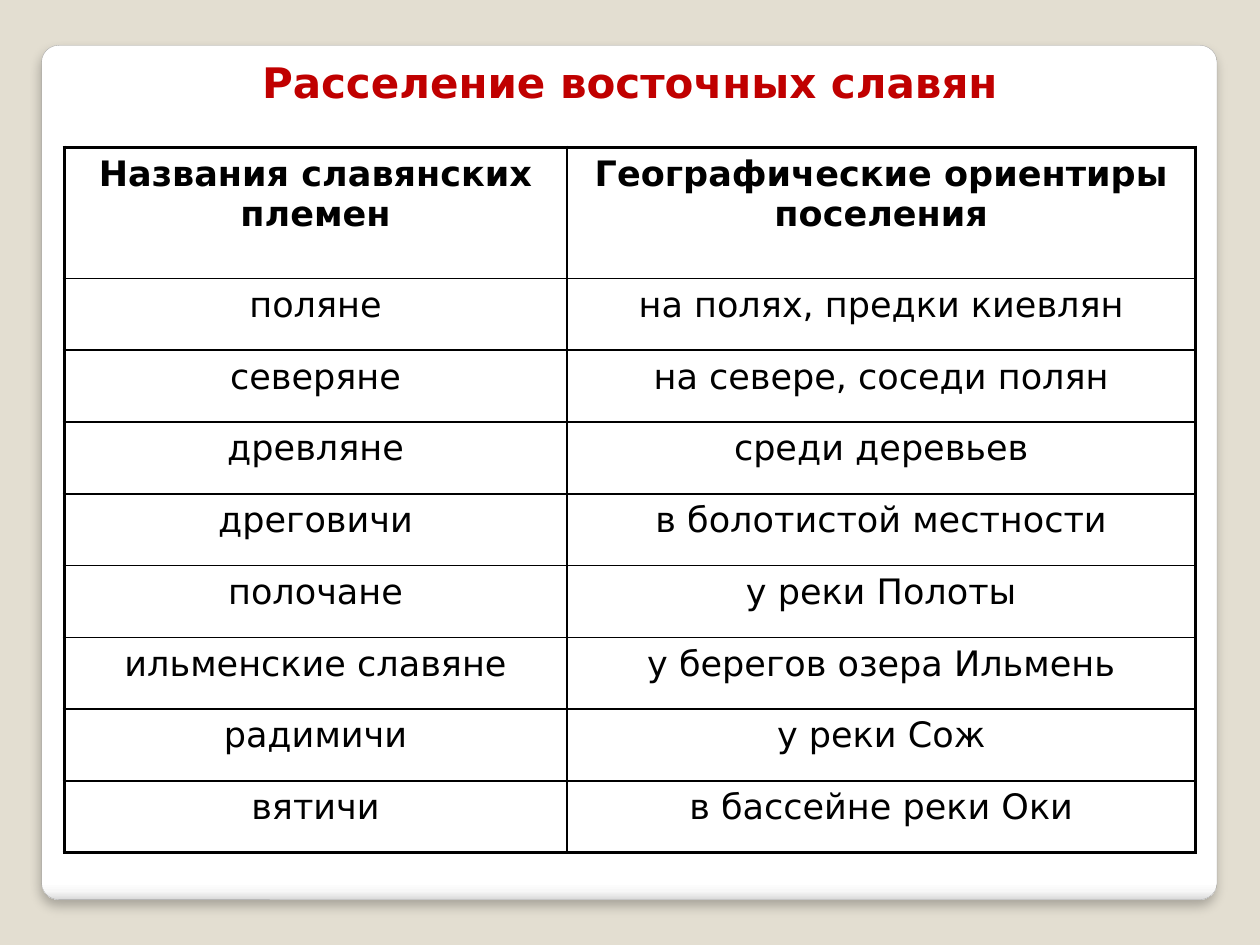
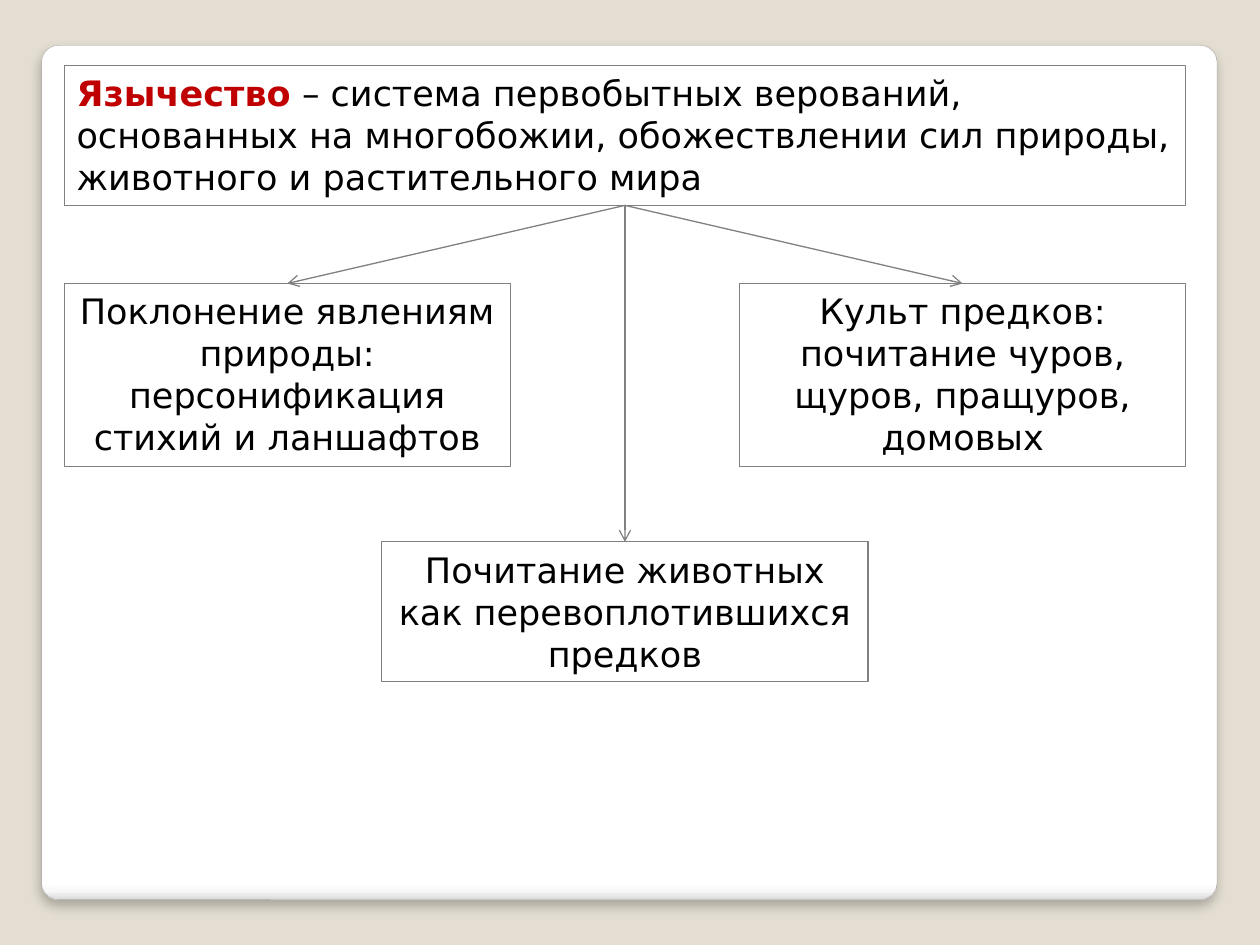
from dataclasses import dataclass

from lxml.etree import SubElement
from pptx import Presentation
from pptx.dml.color import RGBColor
from pptx.enum.shapes import MSO_CONNECTOR as Link, MSO_SHAPE as Preset
from pptx.enum.text import MSO_ANCHOR as Anchor, MSO_AUTO_SIZE as AutoSize, PP_ALIGN as Align
from pptx.oxml import parse_xml
from pptx.oxml.ns import nsdecls, qn
from pptx.shapes.autoshape import Shape
from pptx.slide import Slide
from pptx.util import Inches, Pt

COLORS = {
    "background": "E3DED1",
    "panel_edge": "A4A4A4",
    "accent": "C00000",
    "text": "000000",
    "outline": "808080",
}
PANEL_STOPS = ((0, "FFFFFF"), (98, "FFFFFF"), (99, "F7F7F7"), (100, "DADADA"))
FONT = "DejaVu Sans"
BODY_SIZE = 20
THIN, THICK = 1, 2.25
TOP, BOTTOM = 0, 2

TRIBES = (
    ("Названия славянских племен", "Географические ориентиры поселения"),
    ("поляне", "на полях, предки киевлян"),
    ("северяне", "на севере, соседи полян"),
    ("древляне", "среди деревьев"),
    ("дреговичи", "в болотистой местности"),
    ("полочане", "у реки Полоты"),
    ("ильменские славяне", "у берегов озера Ильмень"),
    ("радимичи", "у реки Сож"),
    ("вятичи", "в бассейне реки Оки"),
)


@dataclass(frozen=True)
class Note:
    left: float
    top: float
    width: float
    height: float
    text: str
    term: str = ""
    align: Align = Align.CENTER


DEFINITION = Note(
    0.51, 0.52, 8.9, 1.11,
    " – система первобытных верований, основанных на многобожии, "
    "обожествлении сил природы, животного и растительного мира",
    term="Язычество", align=Align.LEFT,
)
BELIEFS = (
    Note(0.51, 2.25, 3.54, 1.45,
         "Поклонение явлениям природы: персонификация стихий и ланшафтов"),
    Note(5.87, 2.25, 3.54, 1.45,
         "Культ предков: почитание чуров, щуров, пращуров, домовых"),
    Note(3.03, 4.3, 3.86, 1.11,
         "Почитание животных как перевоплотившихся предков"),
)


def color(name: str) -> RGBColor:
    return RGBColor.from_string(COLORS[name])


def set_font(font, size: float, name: str = "text", bold: bool = False) -> None:
    font.name, font.size, font.bold = FONT, Pt(size), bold
    font.color.rgb = color(name)


def add_page(deck) -> Slide:
    """Add a slide with the shared background and rounded white panel."""
    page = deck.slides.add_slide(deck.slide_layouts[6])
    page.background.fill.solid()
    page.background.fill.fore_color.rgb = color("background")
    panel = page.shapes.add_shape(
        Preset.ROUNDED_RECTANGLE, Inches(0.33), Inches(0.36), Inches(9.33), Inches(6.78))
    panel.adjustments[0] = 0.02
    stops = "".join(
        f'<a:gs pos="{place * 1000}"><a:srgbClr val="{shade}"/></a:gs>'
        for place, shade in PANEL_STOPS)
    properties = panel.element.spPr
    properties.find(qn("a:prstGeom")).addnext(parse_xml(
        f'<a:gradFill {nsdecls("a")}><a:gsLst>{stops}</a:gsLst>'
        '<a:lin ang="5400000" scaled="0"/></a:gradFill>'))
    panel.line.color.rgb = color("panel_edge")
    panel.line.width = Pt(0.16)
    panel.shadow.inherit = False
    properties.find(qn("a:effectLst")).append(parse_xml(
        f'<a:outerShdw {nsdecls("a")} blurRad="{Pt(6)}" dist="{Pt(4)}" dir="5400000" '
        'algn="t" rotWithShape="0"><a:srgbClr val="000000"><a:alpha val="25000"/>'
        '</a:srgbClr></a:outerShdw>'))
    return page


def add_title(page: Slide, text: str) -> None:
    box = page.shapes.add_textbox(Inches(0.35), Inches(0.39), Inches(9.3), Inches(0.52))
    frame = box.text_frame
    frame.word_wrap = True
    frame.vertical_anchor = Anchor.MIDDLE
    para = frame.paragraphs[0]
    para.text, para.alignment = text, Align.CENTER
    set_font(para.font, 24, "accent", bold=True)


def set_borders(cell, widths: dict[str, float]) -> None:
    """Draw cell borders; keys are L, R, T and B in schema order."""
    properties = cell._tc.get_or_add_tcPr()
    for side, width in widths.items():
        border = SubElement(properties, qn(f"a:ln{side}"), w=str(Pt(width)))
        fill = SubElement(border, qn("a:solidFill"))
        SubElement(fill, qn("a:srgbClr"), val=COLORS["text"])


def add_tribe_table(page: Slide) -> None:
    column_widths = (3.99, 4.99)
    row_heights = [1.04] + [0.57] * (len(TRIBES) - 1)
    table = page.shapes.add_table(
        len(TRIBES), len(column_widths), Inches(0.51), Inches(1.17),
        Inches(sum(column_widths)), Inches(sum(row_heights))).table
    table.first_row = table.horz_banding = False
    for column, width in zip(table.columns, column_widths):
        column.width = Inches(width)
    last_row, last_column = len(TRIBES) - 1, len(column_widths) - 1
    for row, (height, texts) in enumerate(zip(row_heights, TRIBES)):
        table.rows[row].height = Inches(height)
        for column, text in enumerate(texts):
            cell = table.cell(row, column)
            outer = {"L": column == 0, "R": column == last_column,
                     "T": row == 0, "B": row == last_row}
            set_borders(cell, {side: THICK if edge else THIN for side, edge in outer.items()})
            cell.fill.background()
            para = cell.text_frame.paragraphs[0]
            para.text, para.alignment = text, Align.CENTER
            set_font(para.font, BODY_SIZE, bold=row == 0)


def add_note(page: Slide, note: Note) -> Shape:
    box = page.shapes.add_shape(
        Preset.RECTANGLE, Inches(note.left), Inches(note.top),
        Inches(note.width), Inches(note.height))
    box.shadow.inherit = False
    box.fill.background()
    box.line.color.rgb = color("outline")
    box.line.width = Pt(0.75)
    frame = box.text_frame
    frame.word_wrap = True
    frame.auto_size = AutoSize.SHAPE_TO_FIT_TEXT
    frame.vertical_anchor = Anchor.TOP
    para = frame.paragraphs[0]
    para.alignment = note.align
    if note.term:
        span = para.add_run()
        span.text = note.term
        set_font(span.font, BODY_SIZE, "accent", bold=True)
    span = para.add_run()
    span.text = note.text
    set_font(span.font, BODY_SIZE)
    return box


def add_arrow(page: Slide, source: Shape, target: Shape) -> None:
    arrow = page.shapes.add_connector(Link.STRAIGHT, 0, 0, 0, 0)
    arrow.begin_connect(source, BOTTOM)
    arrow.end_connect(target, TOP)
    arrow.line.color.rgb = color("outline")
    arrow.line.width = Pt(0.75)
    SubElement(arrow.line._get_or_add_ln(), qn("a:tailEnd"), type="arrow")
    SubElement(arrow.element.spPr, qn("a:effectLst"))


def main() -> None:
    deck = Presentation()
    deck.slide_width, deck.slide_height = Inches(10), Inches(7.5)

    settlement = add_page(deck)
    add_title(settlement, "Расселение восточных славян")
    add_tribe_table(settlement)

    paganism = add_page(deck)
    definition = add_note(paganism, DEFINITION)
    beliefs = [add_note(paganism, note) for note in BELIEFS]
    for belief in beliefs:
        add_arrow(paganism, definition, belief)

    deck.save("out.pptx")


if __name__ == "__main__":
    main()
